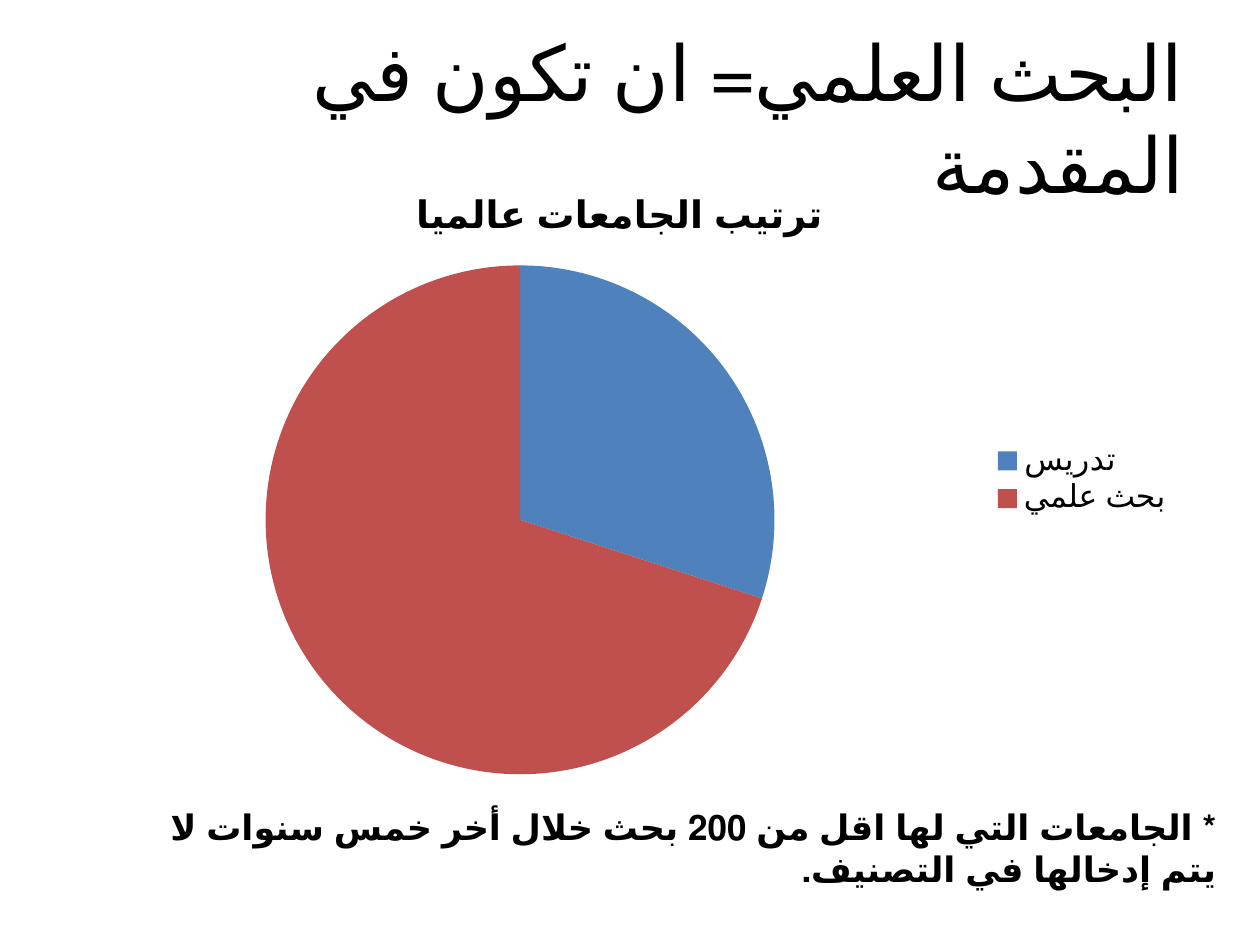
from dataclasses import dataclass

import pptx
import pptx.chart.data
import pptx.dml.color
import pptx.enum.chart
import pptx.enum.lang
import pptx.enum.text
import pptx.util

Pt = pptx.util.Pt
RGB = pptx.dml.color.RGBColor
ALIGN = pptx.enum.text.PP_ALIGN
ANCHOR = pptx.enum.text.MSO_ANCHOR
ARABIC = pptx.enum.lang.MSO_LANGUAGE_ID.ARABIC


@dataclass(frozen=True)
class Theme:
    font: str = "Calibri"
    ink: RGB = RGB(0, 0, 0)
    blue: RGB = RGB(0x4F, 0x81, 0xBD)
    red: RGB = RGB(0xC0, 0x50, 0x4D)
    head: float = 44
    sub: float = 21.6
    note: float = 20
    base: float = 18


@dataclass(frozen=True)
class Box:
    left: float
    top: float
    width: float
    height: float

    def emu(self) -> tuple:
        return Pt(self.left), Pt(self.top), Pt(self.width), Pt(self.height)


@dataclass(frozen=True)
class Slice:
    name: str
    value: int
    color: RGB


THEME = Theme()
TOPIC = "ترتيب الجامعات عالميا"
SLICES = [Slice("تدريس", 30, THEME.blue), Slice("بحث علمي", 70, THEME.red)]


def style(font, size: float, bold: bool = False) -> None:
    font.name = THEME.font
    font.size = Pt(size)
    font.bold = bold
    font.color.rgb = THEME.ink


def write(frame, text: str, *, size: float, bold: bool = False,
          align=ALIGN.RIGHT) -> None:
    """Put one right-to-left Arabic paragraph in a text frame."""
    para = frame.paragraphs[0]
    para.alignment = align
    para._p.get_or_add_pPr().set("rtl", "1")
    run = para.add_run()
    run.text = text
    style(run.font, size, bold)
    run.font.language_id = ARABIC


def draw_pie(slide, box: Box, title: str, parts: list[Slice]) -> None:
    data = pptx.chart.data.CategoryChartData()
    data.categories = [part.name for part in parts]
    data.add_series(title, [part.value for part in parts])
    kind = pptx.enum.chart.XL_CHART_TYPE.PIE
    chart = slide.shapes.add_chart(kind, *box.emu(), data).chart
    style(chart.font, THEME.base)

    # Chart title and legend
    chart.has_title = True
    write(chart.chart_title.text_frame, title, size=THEME.sub, bold=True,
          align=ALIGN.CENTER)
    chart.chart_title.include_in_layout = False
    chart.has_legend = True
    chart.legend.position = pptx.enum.chart.XL_LEGEND_POSITION.RIGHT
    chart.legend.include_in_layout = False
    style(chart.legend.font, THEME.base)

    # Slice colours
    plot = chart.plots[0]
    plot.vary_by_categories = True
    for index, part in enumerate(parts):
        fill = plot.series[0].points[index].format.fill
        fill.solid()
        fill.fore_color.rgb = part.color


def main() -> None:
    deck = pptx.Presentation()
    deck.slide_width, deck.slide_height = Pt(720), Pt(540)
    slide = deck.slides.add_slide(deck.slide_layouts[5])

    # Heading
    head = slide.shapes.title
    head.left, head.top, head.width, head.height = Box(36, 21.6, 648, 90).emu()
    head.text_frame.vertical_anchor = ANCHOR.MIDDLE
    head.text_frame.auto_size = pptx.enum.text.MSO_AUTO_SIZE.NONE
    write(head.text_frame, "البحث العلمي= ان تكون في المقدمة", size=THEME.head)

    # Pie of ranking weights
    draw_pie(slide, Box(30, 96, 648, 356.4), TOPIC, SLICES)

    # Footnote
    note = slide.shapes.add_textbox(*Box(54, 456.5, 648, 31.5).emu()).text_frame
    note.word_wrap = True
    note.auto_size = pptx.enum.text.MSO_AUTO_SIZE.SHAPE_TO_FIT_TEXT
    write(note, "* الجامعات التي لها اقل من 200 بحث خلال أخر خمس سنوات لا "
          "يتم إدخالها في التصنيف. ", size=THEME.note, bold=True)

    deck.save("out.pptx")


if __name__ == "__main__":
    main()
